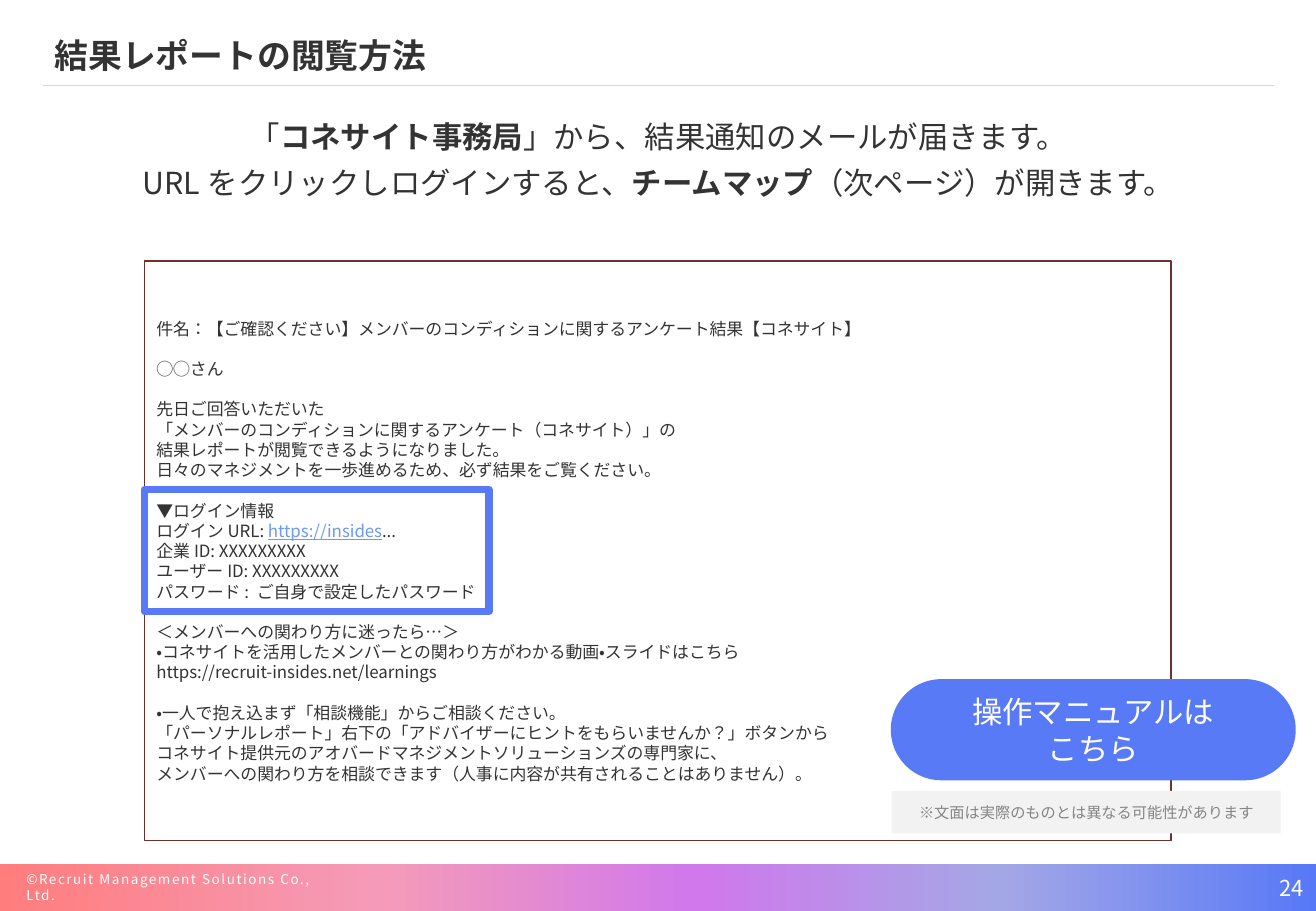
import dataclasses
import pptx
import pptx.dml.color
import pptx.enum.shapes
import pptx.enum.text
import pptx.oxml
import pptx.oxml.ns
import pptx.util

Cm, Pt = pptx.util.Cm, pptx.util.Pt
RGB = pptx.dml.color.RGBColor.from_string
KIND = pptx.enum.shapes.MSO_SHAPE
ALIGN = pptx.enum.text.PP_ALIGN
ANCHOR = pptx.enum.text.MSO_ANCHOR
qn = pptx.oxml.ns.qn


@dataclasses.dataclass(frozen=True)
class Theme:
    font: str = "Noto Sans CJK SC"
    ink: str = "333333"
    white: str = "FFFFFF"
    rule: str = "D5D6D8"
    wine: str = "702F2F"
    blue: str = "597AF7"
    link: str = "6C99F3"
    pale: str = "F2F2F2"
    gray: str = "858585"
    band: tuple = ((0, "FF7D7D"), (29, "F59BB9"), (53, "D078EC"),
                   (76, "A4A7E6"), (100, "5779F7"))
    title: int = 20
    lead: int = 18
    page: int = 13
    body: int = 10
    note: int = 9
    legal: int = 8
    pitch: float = 1.2


T = Theme()

LEAD = [
    [("「", ""), ("コネサイト事務局", "b"), ("」から、結果通知のメールが届きます。", "")],
    [("URLをクリックしログインすると、", ""), ("チームマップ", "b"),
     ("（次ページ）が開きます。", "")],
]

# Mail text: each inner list is a block, set apart by one line
MAIL = [
    ["件名：【ご確認ください】メンバーのコンディションに関するアンケート結果【コネサイト】"],
    ["◯◯さん"],
    ["先日ご回答いただいた",
     "「メンバーのコンディションに関するアンケート（コネサイト）」の",
     "結果レポートが閲覧できるようになりました。",
     "日々のマネジメントを一歩進めるため、必ず結果をご覧ください。"],
    ["▼ログイン情報",
     [("ログインURL: ", ""), ("https://insides", "u"), ("...", "")],
     "企業ID: XXXXXXXXX",
     "ユーザーID: XXXXXXXXX",
     "パスワード: ご自身で設定したパスワード"],
    ["＜メンバーへの関わり方に迷ったら…＞",
     "・コネサイトを活用したメンバーとの関わり方がわかる動画・スライドはこちら",
     "https://recruit-insides.net/learnings"],
    ["・一人で抱え込まず「相談機能」からご相談ください。",
     "「パーソナルレポート」右下の「アドバイザーにヒントをもらいませんか？」ボタンから",
     "コネサイト提供元のアオバードマネジメントソリューションズの専門家に、",
     "メンバーへの関わり方を相談できます（人事に内容が共有されることはありません）。"],
]


def write(para, parts, size, color, bold=False, track=0):
    """Add the runs of one paragraph; marks: b = bold, u = link."""
    if isinstance(parts, str):
        parts = [(parts, "")]
    para.line_spacing = Pt(size * T.pitch)
    for text, mark in parts:
        run = para.add_run()
        run.text = text
        font = run.font
        font.name, font.size = T.font, Pt(size)
        font.bold = bold or mark == "b"
        font.underline = mark == "u"
        font.color.rgb = RGB(T.link if mark == "u" else color)
        props = run._r.get_or_add_rPr()
        props.set("lang", "ja-JP")
        east = pptx.oxml.parse_xml(
            f'<a:ea {pptx.oxml.ns.nsdecls("a")} typeface="{T.font}"/>')
        props.find(qn("a:latin")).addnext(east)
        if track:
            props.set("spc", str(track))


def fill_text(shape, lines, size, color, align=ALIGN.LEFT,
              anchor=ANCHOR.MIDDLE, gaps=None, **style):
    """Write lines into a shape; gaps gives the space before each line."""
    frame = shape.text_frame
    frame.word_wrap = True
    frame.vertical_anchor = anchor
    for i, line in enumerate(lines):
        para = frame.paragraphs[0] if i == 0 else frame.add_paragraph()
        para.alignment = align
        if i and gaps and gaps[i]:
            para.space_before = Pt(gaps[i])
        write(para, line, size, color, **style)


def label(slide, box, lines, size, color, **style):
    shape = slide.shapes.add_textbox(*map(Cm, box))
    fill_text(shape, lines, size, color, **style)


def block(slide, box, kind=KIND.RECTANGLE, fill=None, line=None, width=1):
    shape = slide.shapes.add_shape(kind, *map(Cm, box))
    shape.shadow.inherit = False
    if fill:
        shape.fill.solid()
        shape.fill.fore_color.rgb = RGB(fill)
    else:
        shape.fill.background()
    if line:
        shape.line.color.rgb = RGB(line)
        shape.line.width = Pt(width)
    else:
        shape.line.fill.background()
    return shape


def footer(slide, box):
    x, y, w, h = box
    band = block(slide, box)
    band.fill.gradient()
    band.fill.gradient_angle = 0
    stops = band._element.spPr.find(qn("a:gradFill")).find(qn("a:gsLst"))
    for stop in list(stops):
        stops.remove(stop)
    for spot, color in T.band:
        stops.append(pptx.oxml.parse_xml(
            f'<a:gs {pptx.oxml.ns.nsdecls("a")} pos="{spot * 1000}">'
            f'<a:srgbClr val="{color}"/></a:gs>'))
    label(slide, (x + 0.3, y + 0.18, 6.83, 0.61),
          ["©Recruit Management Solutions Co., Ltd."],
          T.legal, T.white, track=90)
    label(slide, (x + w - 6.2, y, 6.2, h), ["24"], T.page, T.white,
          align=ALIGN.RIGHT)


def header(slide, box):
    x, y, w, h = box
    rule = slide.shapes.add_connector(
        pptx.enum.shapes.MSO_CONNECTOR.STRAIGHT,
        *map(Cm, (x, y + 1.4, x + w, y + 1.4)))
    rule.line.color.rgb = RGB(T.rule)
    rule.line.width = Pt(0.5)
    rule._element.spPr.append(pptx.oxml.parse_xml(
        f'<a:effectLst {pptx.oxml.ns.nsdecls("a")}/>'))
    label(slide, box, ["結果レポートの閲覧方法"], T.title, T.ink, bold=True)


def lead(slide, box):
    label(slide, box, LEAD, T.lead, T.ink, align=ALIGN.CENTER,
          anchor=ANCHOR.TOP, gaps=[0, 6])


def mail(slide, box):
    x, y, w, h = box
    lines = [line for part in MAIL for line in part]
    gaps = [0 if i else T.body * T.pitch
            for part in MAIL for i in range(len(part))]
    sheet = block(slide, box, line=T.wine)
    fill_text(sheet, lines, T.body, T.ink, gaps=gaps)
    # Note at the lower right
    side = x + 15.62
    note = block(slide, (side, y + 11.08, 8.13, 0.89), fill=T.pale)
    fill_text(note, ["※文面は実際のものとは異なる可能性があります"],
              T.note, T.gray, align=ALIGN.CENTER)
    # Frame around the login details, in the gaps between blocks
    block(slide, (x, y + 4.78, 7.2, 2.55), line=T.blue, width=4.5)
    # Manual button
    pill = block(slide, (side, y + 8.76, 8.43, 2.08),
                 KIND.ROUNDED_RECTANGLE, T.blue, T.blue)
    pill.adjustments[0] = 0.5
    fill_text(pill, ["操作マニュアルは", "こちら"], T.lead, T.white,
              align=ALIGN.CENTER)


def main():
    deck = pptx.Presentation()
    deck.slide_width, deck.slide_height = Cm(27.51), Cm(19.05)
    slide = deck.slides.add_slide(deck.slide_layouts[6])
    footer(slide, (0, 18.06, 27.51, 0.99))
    header(slide, (0.89, 0.38, 25.75, 1.52))
    lead(slide, (0.76, 2.34, 26.01, 2.01))
    mail(slide, (3.02, 5.46, 21.46, 12.12))
    deck.save("out.pptx")


if __name__ == "__main__":
    main()
